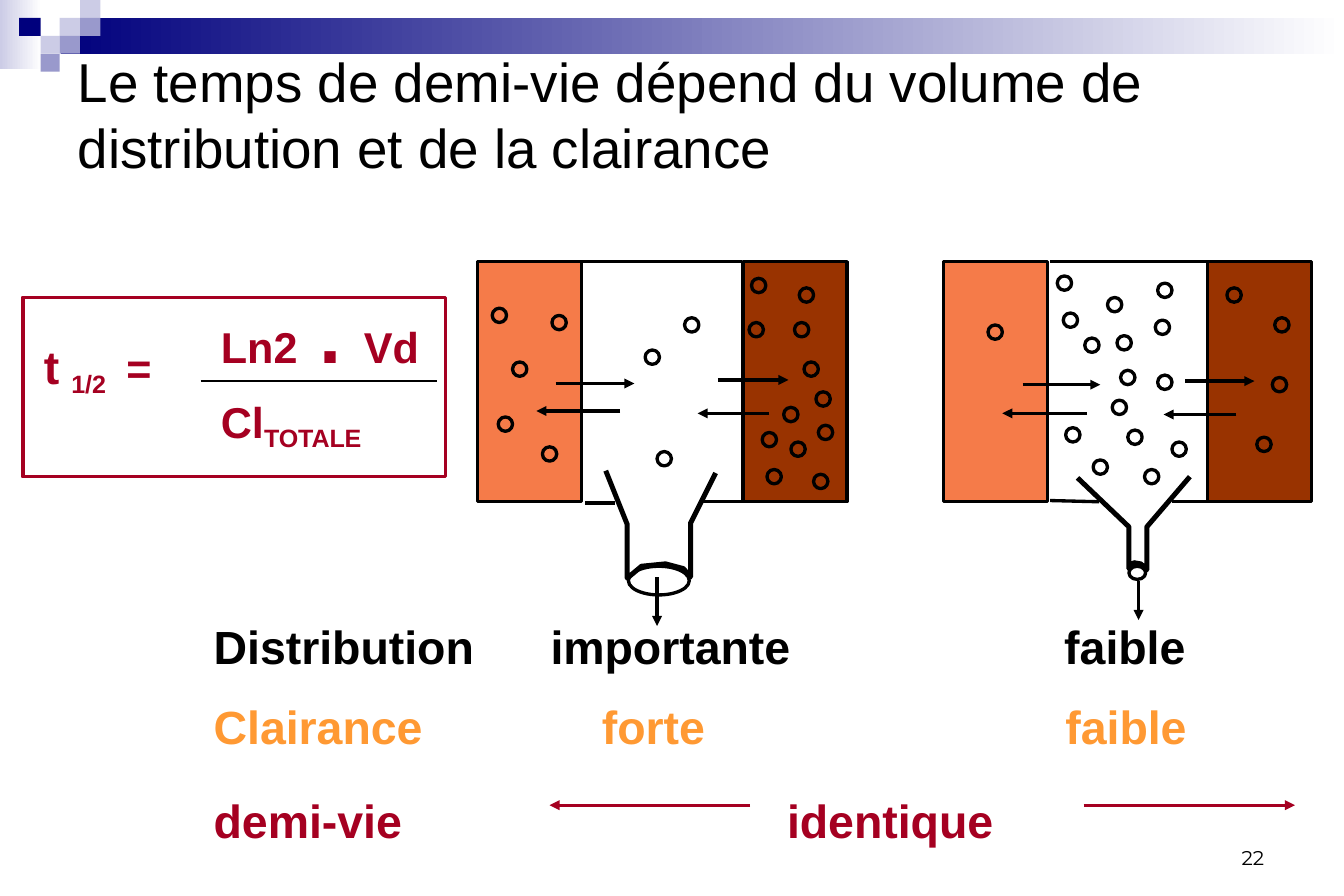
from dataclasses import dataclass

from lxml.etree import SubElement
from pptx import Presentation
from pptx.dml.color import RGBColor
from pptx.enum.shapes import MSO_CONNECTOR, MSO_SHAPE
from pptx.enum.text import MSO_ANCHOR, MSO_AUTO_SIZE, PP_ALIGN
from pptx.oxml.ns import qn
from pptx.util import Cm, Length, Pt

Point = tuple[float, float]
Box = tuple[float, float, float, float]

CM_PER_INCH = 2.54
BLACK, CRIMSON, AMBER = "000000", "A50021", "FF9933"
ORANGE, BROWN, WHITE = "F57B49", "993300", "FFFFFF"
NAVY, LILAC, PALE = "00007D", "9999CC", "CCCCE6"
PARTICLE = 0.12
TISSUE_TOP, TISSUE_WIDTH, TISSUE_HEIGHT = 2.19, 0.87, 2.01


@dataclass
class Segment:
    start: Point
    end: Point
    colour: str = BLACK
    width: float = 2
    arrow: bool = False


@dataclass
class Piece:
    text: str
    size: float
    colour: str = CRIMSON
    bold: bool = True
    subscript: bool = False
    font: str = "Arial"


@dataclass
class Line:
    pieces: list[Piece]
    tabs: tuple[float, ...] = ()
    before: float = 0
    spacing: float = 1


@dataclass
class Beaker:
    left_tissue: float
    right_tissue: float
    exchanges: list[tuple[Point, Point]]
    walls: list[tuple[Point, Point]]
    outlet: Box
    outflow: tuple[Point, Point]
    funnel: list[Point]
    particles: list[Point]


FLOOR_TILES = [
    ((0.5, 0.15, 0.17, 0.15), PALE), ((0.67, 0, 0.17, 0.15), PALE),
    ((0.67, 0.15, 0.17, 0.15), LILAC), ((0.34, 0.3, 0.16, 0.15), PALE),
    ((0.16, 0.15, 0.18, 0.15), NAVY), ((0.5, 0.3, 0.17, 0.15), LILAC),
    ((0.34, 0.45, 0.16, 0.15), LILAC),
]

BEAKERS = [
    Beaker(
        4, 6.22,
        [((4.65, 3.21), (5.31, 3.21)), ((5.19, 3.44), (4.49, 3.44)),
         ((6.01, 3.18), (6.6, 3.18)), ((6.44, 3.46), (5.84, 3.46))],
        [((4.86, 2.19), (6.21, 2.19)), ((4.9, 4.21), (5.15, 4.21)),
         ((6.21, 4.2), (5.87, 4.2))],
        (5.26, 4.74, 0.51, 0.24),
        ((5.5, 4.83), (5.5, 5.24)),
        [(5.07, 3.94), (5.25, 4.39), (5.25, 4.84), (5.37, 4.74), (5.57, 4.72),
         (5.72, 4.76), (5.78, 4.83), (5.78, 4.38), (5.99, 3.96)],
        [(4.54, 3.74), (4.29, 3.03), (4.62, 2.64), (4.12, 2.58), (4.17, 3.49),
         (5.4, 2.93), (5.73, 2.66), (5.5, 3.78), (6.29, 2.33), (6.69, 2.41),
         (6.27, 2.7), (6.65, 2.7), (6.73, 3.03), (6.83, 3.28), (6.56, 3.41),
         (6.85, 3.56), (6.38, 3.62), (6.42, 3.93), (6.62, 3.7), (6.81, 3.97)],
    ),
    Beaker(
        7.9, 10.11,
        [((8.56, 3.22), (9.21, 3.22)), ((9.1, 3.46), (8.39, 3.46)),
         ((9.92, 3.19), (10.5, 3.19)), ((10.35, 3.47), (9.74, 3.47))],
        [((8.79, 2.19), (10.1, 2.19)), ((8.79, 4.19), (9.2, 4.2)),
         ((10.12, 4.2), (9.81, 4.2))],
        (9.45, 4.74, 0.14, 0.11),
        ((9.53, 4.86), (9.53, 5.19)),
        [(9.02, 4), (9.45, 4.41), (9.45, 4.76), (9.49, 4.71), (9.55, 4.72),
         (9.6, 4.77), (9.6, 4.41), (9.96, 3.99)],
        [(8.27, 2.72), (10.27, 2.41), (10.67, 2.66), (10.65, 3.16), (10.52, 3.66),
         (8.85, 2.31), (9.27, 2.49), (9.69, 2.37), (9.35, 2.81), (9.67, 2.68),
         (9.69, 3.14), (8.9, 2.62), (9.08, 2.83), (9.38, 3.1), (9.31, 3.35),
         (9.44, 3.6), (9.81, 3.7), (8.92, 3.58), (9.15, 3.85), (9.58, 3.93)],
    ),
]


def cm(inches: float) -> Length:
    return Cm(inches * CM_PER_INCH)


def rgb(colour: str) -> RGBColor:
    return RGBColor.from_string(colour)


def style(shape, fill: str | None, line: str | None, width: float = 2) -> None:
    shape.shadow.inherit = False
    if fill:
        shape.fill.solid()
        shape.fill.fore_color.rgb = rgb(fill)
    else:
        shape.fill.background()
    if line:
        shape.line.color.rgb = rgb(line)
        shape.line.width = Pt(width)
    else:
        shape.line.fill.background()


def draw_shape(slide, kind: MSO_SHAPE, box: Box, fill: str | None = None,
               line: str | None = BLACK, width: float = 2):
    shape = slide.shapes.add_shape(kind, *map(cm, box))
    style(shape, fill, line, width)
    return shape


def draw_fade(slide, box: Box, colour: str) -> None:
    band = draw_shape(slide, MSO_SHAPE.RECTANGLE, box, line=None)
    band.fill.gradient()
    band.fill.gradient_angle = 0
    for stop, stop_colour in zip(band.fill.gradient_stops, (colour, WHITE)):
        stop.color.rgb = rgb(stop_colour)


def draw_segment(slide, segment: Segment) -> None:
    connector = slide.shapes.add_connector(
        MSO_CONNECTOR.STRAIGHT, *map(cm, segment.start + segment.end))
    connector.line.color.rgb = rgb(segment.colour)
    connector.line.width = Pt(segment.width)
    if segment.arrow:
        SubElement(connector.line._get_or_add_ln(), qn("a:tailEnd"), type="triangle")
    SubElement(connector._element.spPr, qn("a:effectLst"))


def add_piece(paragraph, piece: Piece) -> None:
    run = paragraph.add_run()
    run.text = piece.text
    run.font.name = piece.font
    run.font.size = Pt(piece.size)
    run.font.bold = piece.bold
    run.font.color.rgb = rgb(piece.colour)
    if piece.subscript:
        run.font._element.set("baseline", "-20000")


def draw_text(slide, box: Box, lines: list[Line], align: PP_ALIGN = PP_ALIGN.LEFT,
              anchor: MSO_ANCHOR = MSO_ANCHOR.TOP) -> None:
    frame = slide.shapes.add_textbox(*map(cm, box)).text_frame
    frame.word_wrap = True
    frame.vertical_anchor = anchor
    for index, line in enumerate(lines):
        paragraph = frame.add_paragraph() if index else frame.paragraphs[0]
        paragraph.alignment = align
        paragraph.line_spacing = line.spacing
        paragraph.space_before = Pt(line.before)
        if line.tabs:
            stops = SubElement(paragraph._p.get_or_add_pPr(), qn("a:tabLst"))
            for tab in line.tabs:
                SubElement(stops, qn("a:tab"), pos=str(int(cm(tab))), algn="l")
        for piece in line.pieces:
            add_piece(paragraph, piece)


def draw_beaker(slide, beaker: Beaker) -> None:
    for left, fill in ((beaker.left_tissue, ORANGE), (beaker.right_tissue, BROWN)):
        draw_shape(slide, MSO_SHAPE.RECTANGLE,
                   (left, TISSUE_TOP, TISSUE_WIDTH, TISSUE_HEIGHT), fill)
    draw_shape(slide, MSO_SHAPE.OVAL, beaker.outlet)
    for start, end in [*beaker.exchanges, beaker.outflow]:
        draw_segment(slide, Segment(start, end, arrow=True))
    for left, top in beaker.particles:
        draw_shape(slide, MSO_SHAPE.OVAL, (left, top, PARTICLE, PARTICLE))
    for start, end in beaker.walls:
        draw_segment(slide, Segment(start, end))
    rim, *bends = [(cm(x), cm(y)) for x, y in beaker.funnel]
    builder = slide.shapes.build_freeform(*rim)
    builder.add_line_segments(bends, close=False)
    style(builder.convert_to_shape(), None, BLACK, 3)


def draw_title(slide) -> None:
    title = slide.shapes.title
    title.left, title.top, title.width, title.height = map(cm, (0.55, 0.24, 10.41, 1.42))
    frame = title.text_frame
    frame.auto_size = MSO_AUTO_SIZE.NONE
    frame.vertical_anchor = MSO_ANCHOR.MIDDLE
    frame.paragraphs[0].alignment = PP_ALIGN.LEFT
    add_piece(frame.paragraphs[0], Piece(
        "Le temps de demi-vie dépend du volume de distribution et de la clairance",
        33, BLACK, bold=False))


def draw_formula(slide) -> None:
    draw_text(slide, (0.27, 2.78, 1.27, 0.57), [Line(
        [Piece("t", 28), Piece(" ", 26), Piece("1/2", 26, subscript=True),
         Piece("\t=", 26)], tabs=(0.69,))])
    draw_text(slide, (1.75, 2.33, 1.95, 0.9), [Line(
        [Piece("Ln2", 26), Piece(" . ", 48), Piece("Vd", 26)])])
    draw_text(slide, (1.75, 3.26, 1.51, 0.53), [Line(
        [Piece("Cl", 26), Piece("TOTALE", 26, subscript=True)])])
    draw_segment(slide, Segment((1.68, 3.19), (3.66, 3.19), width=1))
    draw_shape(slide, MSO_SHAPE.RECTANGLE, (0.19, 2.49, 3.54, 1.5),
               line=CRIMSON, width=2.25)


def draw_comparison(slide) -> None:
    draw_text(slide, (1.69, 5.18, 8.6, 1.92), [
        Line([Piece("Distribution\timportante\tfaible", 28, BLACK)], (2.82, 7.12), 0, 0.9),
        Line([Piece("Clairance\tforte\tfaible", 28, AMBER)], (3.25, 7.13), 18, 0.9),
        Line([Piece("demi-vie\tidentique", 28)], (4.8,), 26, 0.9),
    ])
    for start, end in (((6.28, 6.74), (4.6, 6.74)), ((9.07, 6.74), (10.84, 6.74))):
        draw_segment(slide, Segment(start, end, CRIMSON, arrow=True))


def main() -> None:
    deck = Presentation()
    deck.slide_width, deck.slide_height = cm(11.25), cm(7.5)
    slide = deck.slides.add_slide(deck.slide_layouts[5])
    draw_fade(slide, (0, 0, 0.35, 0.58), PALE)
    draw_fade(slide, (0.51, 0.15, 10.74, 0.3), NAVY)
    for box, fill in FLOOR_TILES:
        draw_shape(slide, MSO_SHAPE.RECTANGLE, box, fill, line=None)
    draw_title(slide)
    draw_comparison(slide)
    for beaker in BEAKERS:
        draw_beaker(slide, beaker)
    draw_formula(slide)
    draw_text(slide, (8.06, 6.83, 2.62, 0.5),
              [Line([Piece("22", 12, BLACK, bold=False, font="Montserrat")])],
              PP_ALIGN.RIGHT, MSO_ANCHOR.BOTTOM)
    deck.save("out.pptx")


if __name__ == "__main__":
    main()
